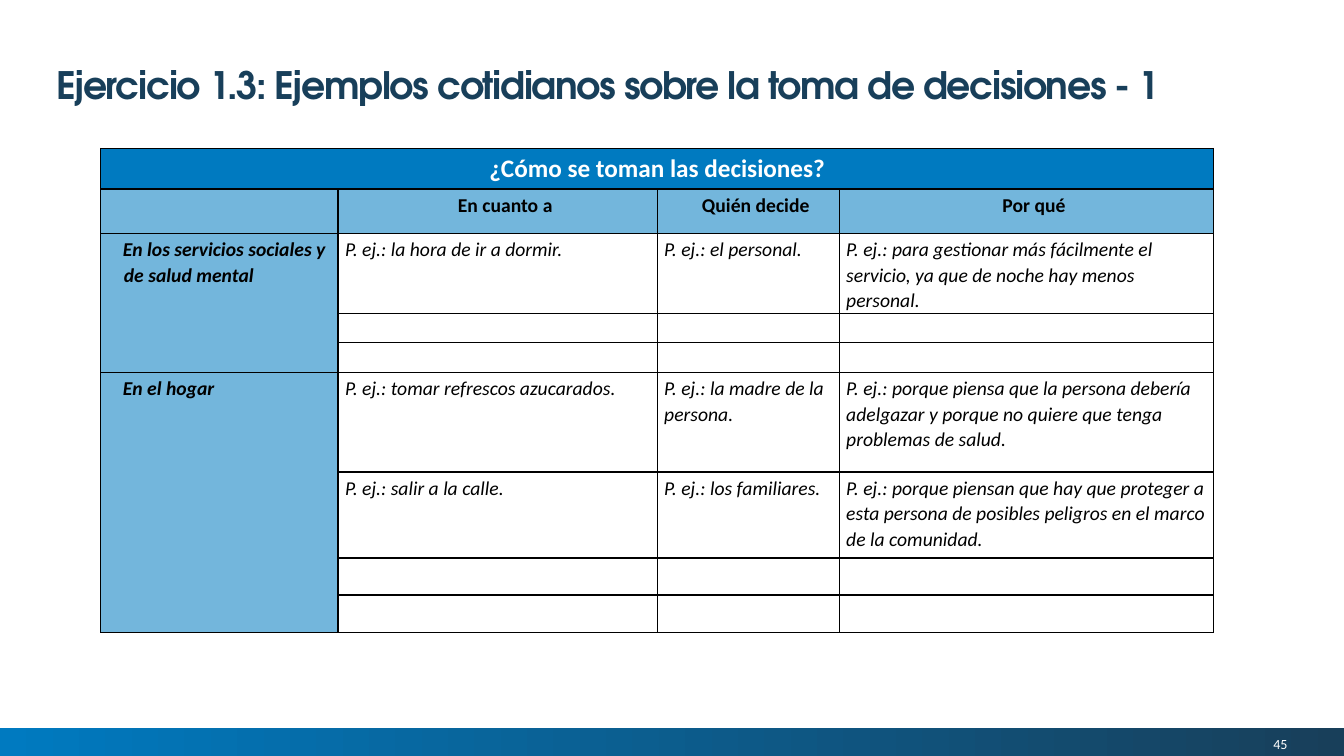
from dataclasses import dataclass
from lxml.etree import SubElement
from pptx import Presentation
from pptx.dml.color import RGBColor
from pptx.enum.shapes import MSO_SHAPE
from pptx.enum.text import MSO_ANCHOR, PP_ALIGN
from pptx.oxml.ns import qn
from pptx.util import Pt


@dataclass(frozen=True)
class Theme:
    navy: str = "183F5A"
    blue: str = "007AC0"
    light: str = "73B6DC"
    white: str = "FFFFFF"
    black: str = "000000"
    title_font: str = "TeX Gyre Adventor"
    body_font: str = "Calibri"
    title_size: float = 27
    head_size: float = 18
    body_size: float = 14
    empty_size: float = 10
    number_size: float = 10


def write(tf, text, font, size, color, bold=False, italic=False,
          align=PP_ALIGN.LEFT, line=None, spacing=None, margin=None, indent=None):
    """Put one formatted paragraph in a text frame."""
    p = tf.paragraphs[0]
    p.alignment = align
    if line is not None:
        p.line_spacing = line
    if margin is not None:
        pPr = p._p.get_or_add_pPr()
        pPr.set("marL", str(Pt(margin)))
        pPr.set("indent", str(Pt(indent or 0)))
    r = p.add_run()
    r.text = text
    f = r.font
    f.name, f.size, f.bold, f.italic = font, Pt(size), bold, italic
    f.color.rgb = RGBColor.from_string(color)
    if spacing is not None:
        f._element.set("spc", str(int(spacing * 100)))


class SlideBuilder:
    def __init__(self, prs, theme):
        self.t = theme
        self.s = prs.slides.add_slide(prs.slide_layouts[5])

    def title(self, text, x, y, w, h):
        sp = self.s.shapes.title
        sp.left, sp.top, sp.width, sp.height = Pt(x), Pt(y), Pt(w), Pt(h)
        tf = sp.text_frame
        tf.word_wrap = True
        tf.vertical_anchor = MSO_ANCHOR.TOP
        write(tf, text, self.t.title_font, self.t.title_size, self.t.navy,
              bold=True, line=Pt(33), spacing=-1)

    def gradient_bar(self, x, y, w, h):
        sp = self.s.shapes.add_shape(MSO_SHAPE.RECTANGLE, Pt(x), Pt(y), Pt(w), Pt(h))
        sp.shadow.inherit = False
        sp.line.fill.background()
        sp.fill.gradient()
        sp.fill.gradient_angle = 0
        for stop, color in zip(sp.fill.gradient_stops, (self.t.blue, self.t.navy)):
            stop.color.rgb = RGBColor.from_string(color)

    def page_number(self, text, x, y, w, h):
        tf = self.s.shapes.add_textbox(Pt(x), Pt(y), Pt(w), Pt(h)).text_frame
        tf.word_wrap = True
        tf.vertical_anchor = MSO_ANCHOR.MIDDLE
        tf.margin_left = tf.margin_right = tf.margin_top = tf.margin_bottom = 0
        write(tf, text, self.t.body_font, self.t.number_size, self.t.white,
              align=PP_ALIGN.RIGHT)

    def table(self, x, y, widths, heights):
        tbl = self.s.shapes.add_table(len(heights), len(widths), Pt(x), Pt(y),
                                      Pt(sum(widths)), Pt(sum(heights))).table
        tbl.first_row = tbl.horz_banding = False
        for col, w in zip(tbl.columns, widths):
            col.width = Pt(w)
        for row, h in zip(tbl.rows, heights):
            row.height = Pt(h)
        for cell in tbl.iter_cells():
            self.border(cell)
            self.fill(cell, self.t.white)
        return tbl

    def border(self, cell):
        tcPr = cell._tc.get_or_add_tcPr()
        for side in ("lnL", "lnR", "lnT", "lnB"):
            ln = SubElement(tcPr, qn(f"a:{side}"), w=str(Pt(1)))
            SubElement(SubElement(ln, qn("a:solidFill")), qn("a:srgbClr"), val=self.t.black)

    def fill(self, cell, color):
        cell.fill.solid()
        cell.fill.fore_color.rgb = RGBColor.from_string(color)

    def cell(self, cell, text, margin=0, **fmt):
        cell.margin_left = cell.margin_right = Pt(5)
        cell.margin_top, cell.margin_bottom = Pt(2.2), 0
        if text:
            write(cell.text_frame, text, self.t.body_font, self.t.body_size, self.t.black,
                  line=1.07, margin=margin, indent=-0.7, **fmt)
        else:
            SubElement(cell.text_frame.paragraphs[0]._p, qn("a:endParaRPr"),
                       sz=str(int(self.t.empty_size * 100)))


HEADINGS = ["", "En cuanto a", "Quién decide", "Por qué"]
EMPTY = ("", "", "")
# Each setting with its rows of examples
SETTINGS = [
    ("En los servicios sociales y de salud mental", [
        ("P. ej.: la hora de ir a dormir.", "P. ej.: el personal.",
         "P. ej.: para gestionar más fácilmente el servicio, "
         "ya que de noche hay menos personal."),
        EMPTY, EMPTY]),
    ("En el hogar", [
        ("P. ej.: tomar refrescos azucarados.", "P. ej.: la madre de la persona.",
         "P. ej.: porque piensa que la persona debería adelgazar "
         "y porque no quiere que tenga problemas de salud."),
        ("P. ej.: salir a la calle.", "P. ej.: los familiares.",
         "P. ej.: porque piensan que hay que proteger a esta persona "
         "de posibles peligros en el marco de la comunidad."),
        EMPTY, EMPTY]),
]


def main():
    prs = Presentation()
    prs.slide_width, prs.slide_height = Pt(960), Pt(540)
    t = Theme()
    b = SlideBuilder(prs, t)

    # Footer and title
    b.gradient_bar(0, 520, 960, 20)
    b.page_number("45", 790, 522.7, 129.6, 17.3)
    b.title("Ejercicio 1.3: Ejemplos cotidianos sobre la toma de decisiones - 1",
            33.1, 39.6, 879, 35.3)

    # Table heading rows
    tbl = b.table(72, 106, [169.5, 228, 130, 267.5],
                  [29, 31.7, 57, 21, 21.5, 71, 61.5, 26.5, 26.5])
    top = tbl.cell(0, 0)
    top.merge(tbl.cell(0, 3))
    b.fill(top, t.blue)
    write(top.text_frame, "¿Cómo se toman las decisiones?", t.body_font, t.head_size,
          t.white, bold=True, align=PP_ALIGN.CENTER)
    for c, heading in enumerate(HEADINGS):
        b.fill(tbl.cell(1, c), t.light)
        b.cell(tbl.cell(1, c), heading, margin=11.5, bold=True, align=PP_ALIGN.CENTER)

    # Settings and examples
    first = 2
    for setting, examples in SETTINGS:
        side = tbl.cell(first, 0)
        side.merge(tbl.cell(first + len(examples) - 1, 0))
        b.fill(side, t.light)
        b.cell(side, setting, margin=11.5, bold=True, italic=True)
        for r, example in enumerate(examples, first):
            for c, text in enumerate(example, 1):
                b.cell(tbl.cell(r, c), text, italic=True)
        first += len(examples)

    prs.save("out.pptx")


if __name__ == "__main__":
    main()
